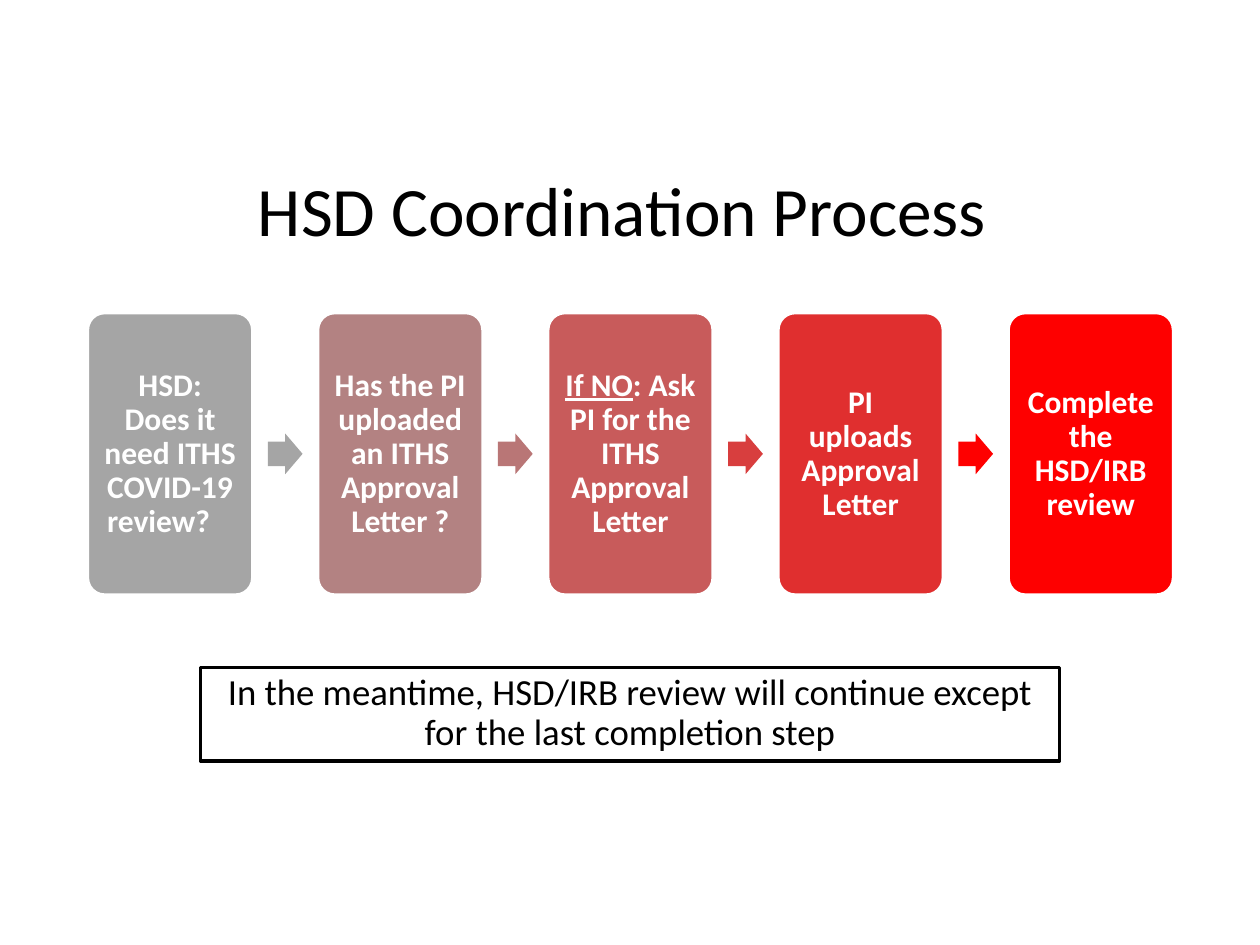
import pptx
import pptx.dml.color
import pptx.enum.shapes
import pptx.enum.text
import pptx.util

Cm = pptx.util.Cm
Pt = pptx.util.Pt
SHAPE = pptx.enum.shapes.MSO_SHAPE
ANCHOR = pptx.enum.text.MSO_ANCHOR

STEPS = [
    ("A5A5A5", "A5A5A5", [("HSD: Does it need ITHS COVID-19 review?\t", False)]),
    ("B38282", "B97676", [("Has the PI uploaded an ITHS Approval Letter ?", False)]),
    ("C85B5B", "D83E3E", [("If NO", True), (": Ask PI for the ITHS Approval Letter", False)]),
    ("E02F2F", "FE0000", [("PI uploads Approval Letter", False)]),
    ("FE0000", None, [("Complete the HSD/IRB review", False)]),
]


def rgb(value):
    return pptx.dml.color.RGBColor.from_string(value)


def write(sp, runs, size, color="000000", bold=False, inset=(0.25, 0.13), anchor=ANCHOR.MIDDLE):
    tf = sp.text_frame
    tf.word_wrap = True
    tf.auto_size = pptx.enum.text.MSO_AUTO_SIZE.NONE
    tf.vertical_anchor = anchor
    tf.margin_left = tf.margin_right = Cm(inset[0])
    tf.margin_top = tf.margin_bottom = Cm(inset[1])
    p = tf.paragraphs[0]
    p.alignment = pptx.enum.text.PP_ALIGN.CENTER
    p.line_spacing = 0.9
    p.space_before = Pt(0)
    for text, underline in runs:
        r = p.add_run()
        r.text = text
        r.font.name = "Calibri"
        r.font.size = Pt(size)
        r.font.bold = bold
        r.font.underline = underline
        r.font.color.rgb = rgb(color)


def add_shape(s, kind, x, y, w, h, fill=None, line=None, line_width=1, adj=()):
    sp = s.shapes.add_shape(kind, Cm(x), Cm(y), Cm(w), Cm(h))
    sp.shadow.inherit = False
    for i, value in enumerate(adj):
        sp.adjustments[i] = value
    if fill:
        sp.fill.solid()
        sp.fill.fore_color.rgb = rgb(fill)
    else:
        sp.fill.background()
    if line:
        sp.line.color.rgb = rgb(line)
        sp.line.width = Pt(line_width)
    else:
        sp.line.fill.background()
    return sp


def add_title(s, x, y, w, h):
    sp = s.shapes.title
    sp.left, sp.top, sp.width, sp.height = Cm(x), Cm(y), Cm(w), Cm(h)
    write(sp, [("HSD Coordination Process ", False)], 39.6)


def add_process(s, x, y, w, h):
    box_w, arrow_w, arrow_h = 3.3, 0.7, 0.82
    pitch = (w - box_w) / (len(STEPS) - 1)
    arrow_dx = (pitch + box_w - arrow_w) / 2
    for i, (fill, arrow_fill, runs) in enumerate(STEPS):
        left = x + i * pitch
        sp = add_shape(s, SHAPE.ROUNDED_RECTANGLE, left, y, box_w, h,
                       fill=fill, line="FFFFFF", adj=[0.1])
        write(sp, runs, 18, color="FFFFFF", bold=True, inset=(0.2, 0.2))
        if arrow_fill:
            add_shape(s, SHAPE.RIGHT_ARROW, left + arrow_dx, y + (h - arrow_h) / 2,
                      arrow_w, arrow_h, fill=arrow_fill, adj=[0.6, 0.5])


def add_note(s, x, y, w, h):
    sp = add_shape(s, SHAPE.RECTANGLE, x, y, w, h, line="000000", line_width=2)
    text = "In the meantime, HSD/IRB review will continue except for the last completion step"
    write(sp, [(text, False)], 21, anchor=ANCHOR.TOP)


def main():
    prs = pptx.Presentation()
    prs.slide_width, prs.slide_height = Cm(25.4), Cm(19.05)
    s = prs.slides.add_slide(prs.slide_layouts[5])
    add_title(s, 1.75, 3.5, 21.9, 1.63)
    add_process(s, 1.78, 6.32, 21.86, 5.66)
    add_note(s, 4.04, 13.46, 17.32, 1.88)
    prs.save("out.pptx")


if __name__ == "__main__":
    main()
